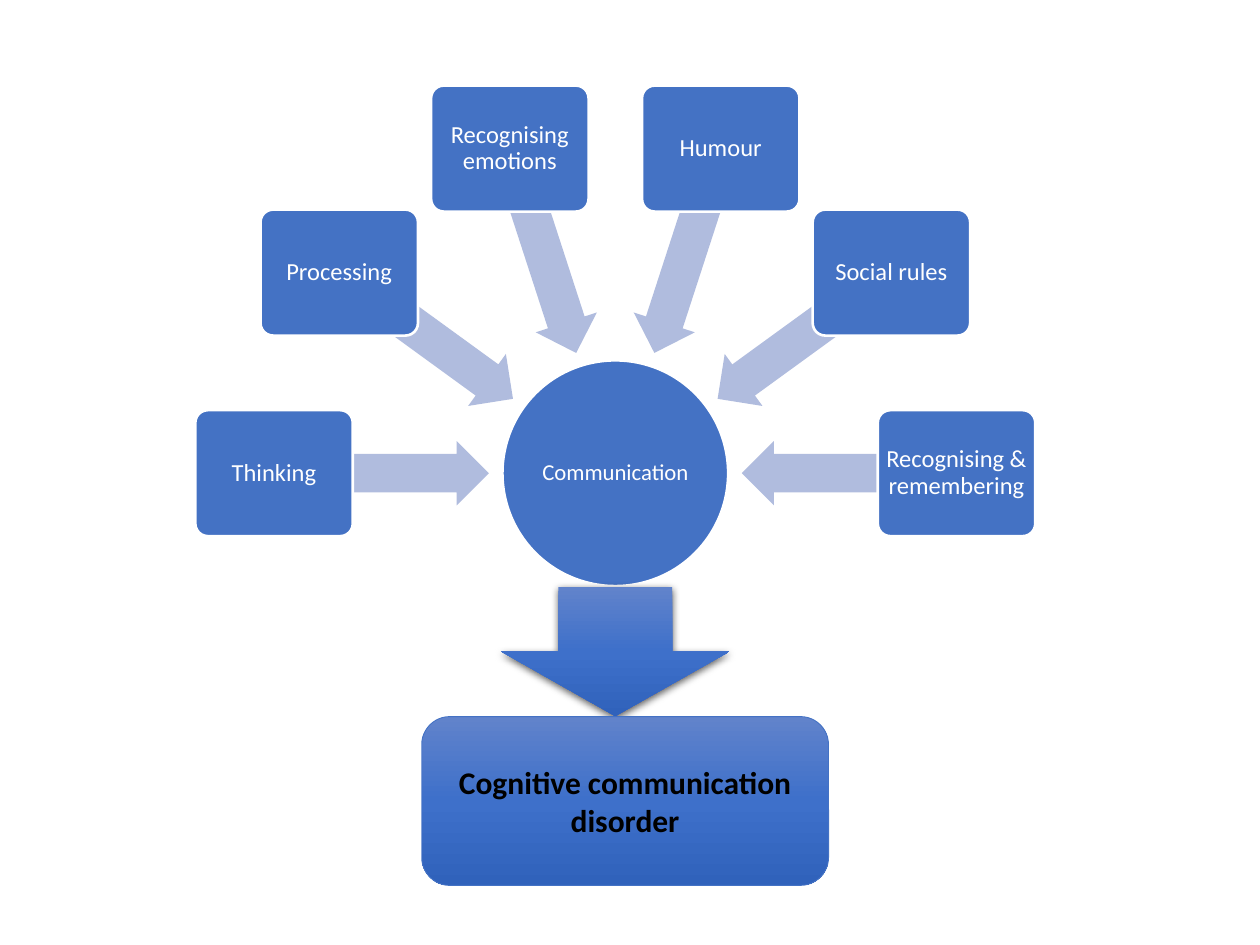
import copy
import math

import pptx
import pptx.util
from pptx.dml.color import RGBColor
from pptx.enum.shapes import MSO_SHAPE
from pptx.enum.text import MSO_ANCHOR, PP_ALIGN
from pptx.oxml import parse_xml
from pptx.oxml.ns import nsdecls

Pt = pptx.util.Pt

WHITE = RGBColor(0xFF, 0xFF, 0xFF)
BLACK = RGBColor(0x00, 0x00, 0x00)
BLUE = RGBColor(0x44, 0x72, 0xC4)
PALE_BLUE = RGBColor(0xB0, 0xBC, 0xDE)
GRADIENT = (
    (0, RGBColor(0x61, 0x83, 0xCB)),
    (0.5, RGBColor(0x3E, 0x70, 0xCA)),
    (1, RGBColor(0x30, 0x62, 0xBB)),
)

FACTORS = (
    "Thinking",
    "Processing",
    "Recognising emotions",
    "Humour",
    "Social rules",
    "Recognising & remembering",
)


def add_box(slide, kind, box, fill=None, line=None, line_width=1.5, adjustments=()):
    """Add a shape without shadow; a fill of None leaves it to the caller."""
    sp = slide.shapes.add_shape(kind, *(Pt(round(v, 2)) for v in box))
    sp.shadow.inherit = False
    for i, value in enumerate(adjustments):
        sp.adjustments[i] = value
    if fill is not None:
        sp.fill.solid()
        sp.fill.fore_color.rgb = fill
    if line is None:
        sp.line.fill.background()
    else:
        sp.line.color.rgb = line
        sp.line.width = Pt(line_width)
    return sp


def set_text(sp, text, size=14, color=WHITE, bold=False, spacing=0.9, inset=None):
    tf = sp.text_frame
    tf.word_wrap = True
    tf.vertical_anchor = MSO_ANCHOR.MIDDLE
    if inset is not None:
        tf.margin_left = tf.margin_right = tf.margin_top = tf.margin_bottom = Pt(inset)
    p = tf.paragraphs[0]
    p.alignment = PP_ALIGN.CENTER
    p.line_spacing = spacing
    r = p.add_run()
    r.text = text
    r.font.name = "Calibri"
    r.font.size = Pt(size)
    r.font.bold = bold
    r.font.color.rgb = color


def set_gradient(sp):
    """Fill from top to bottom with the three GRADIENT stops."""
    sp.fill.gradient()
    sp.fill.gradient_angle = 270
    stops = sp.fill._fill._gradFill.gsLst
    stops.append(copy.deepcopy(stops[-1]))
    for stop, (position, color) in zip(sp.fill.gradient_stops, GRADIENT):
        stop.position = position
        stop.color.rgb = color


def add_shadow(sp):
    sp._element.spPr.find(pptx.oxml.ns.qn("a:effectLst")).append(parse_xml(
        f'<a:outerShdw {nsdecls("a")} blurRad="{Pt(4.5)}" dist="{Pt(1.5)}" '
        'dir="5400000" algn="ctr" rotWithShape="0">'
        '<a:srgbClr val="000000"><a:alpha val="63000"/></a:srgbClr></a:outerShdw>'))


def centred(cx, cy, width, height):
    return cx - width / 2, cy - height / 2, width, height


def draw_converging_factors(slide, cx, cy, radius):
    """Draw the hub at (cx, cy) and the factors on a half circle above it."""
    hub = add_box(slide, MSO_SHAPE.OVAL, centred(cx, cy, 129, 129), BLUE, WHITE)
    set_text(hub, "Communication", size=13, inset=0.7)
    step = 180 / (len(FACTORS) - 1)
    arrow_radius = radius * 0.686
    for i, factor in enumerate(FACTORS):
        angle = 180 + i * step
        dx, dy = math.cos(math.radians(angle)), math.sin(math.radians(angle))
        arrow = add_box(
            slide, MSO_SHAPE.LEFT_ARROW,
            centred(cx + arrow_radius * dx, cy + arrow_radius * dy, 123, 36.7),
            PALE_BLUE, adjustments=(0.6, 0.5))
        arrow.rotation = angle % 360
        card = add_box(
            slide, MSO_SHAPE.ROUNDED_RECTANGLE,
            centred(cx + radius * dx, cy + radius * dy, 90, 72),
            BLUE, WHITE, adjustments=(0.1,))
        set_text(card, factor, inset=2)


def draw_outcome(slide, arrow_box, result_box):
    arrow = add_box(slide, MSO_SHAPE.DOWN_ARROW, arrow_box)
    set_gradient(arrow)
    add_shadow(arrow)
    result = add_box(slide, MSO_SHAPE.ROUNDED_RECTANGLE, result_box,
                     line=BLUE, line_width=0.5)
    set_gradient(result)
    set_text(result, "Cognitive communication disorder",
             size=18, color=BLACK, bold=True, spacing=1.0)


def main():
    prs = pptx.Presentation()
    prs.slide_width, prs.slide_height = Pt(720), Pt(540)
    s = prs.slides.add_slide(prs.slide_layouts[6])
    draw_converging_factors(s, 351.6, 270.4, 195)
    draw_outcome(s, (286.5, 335.6, 130.2, 73.6), (241, 409.5, 232.5, 96.5))
    prs.save("out.pptx")


if __name__ == "__main__":
    main()
